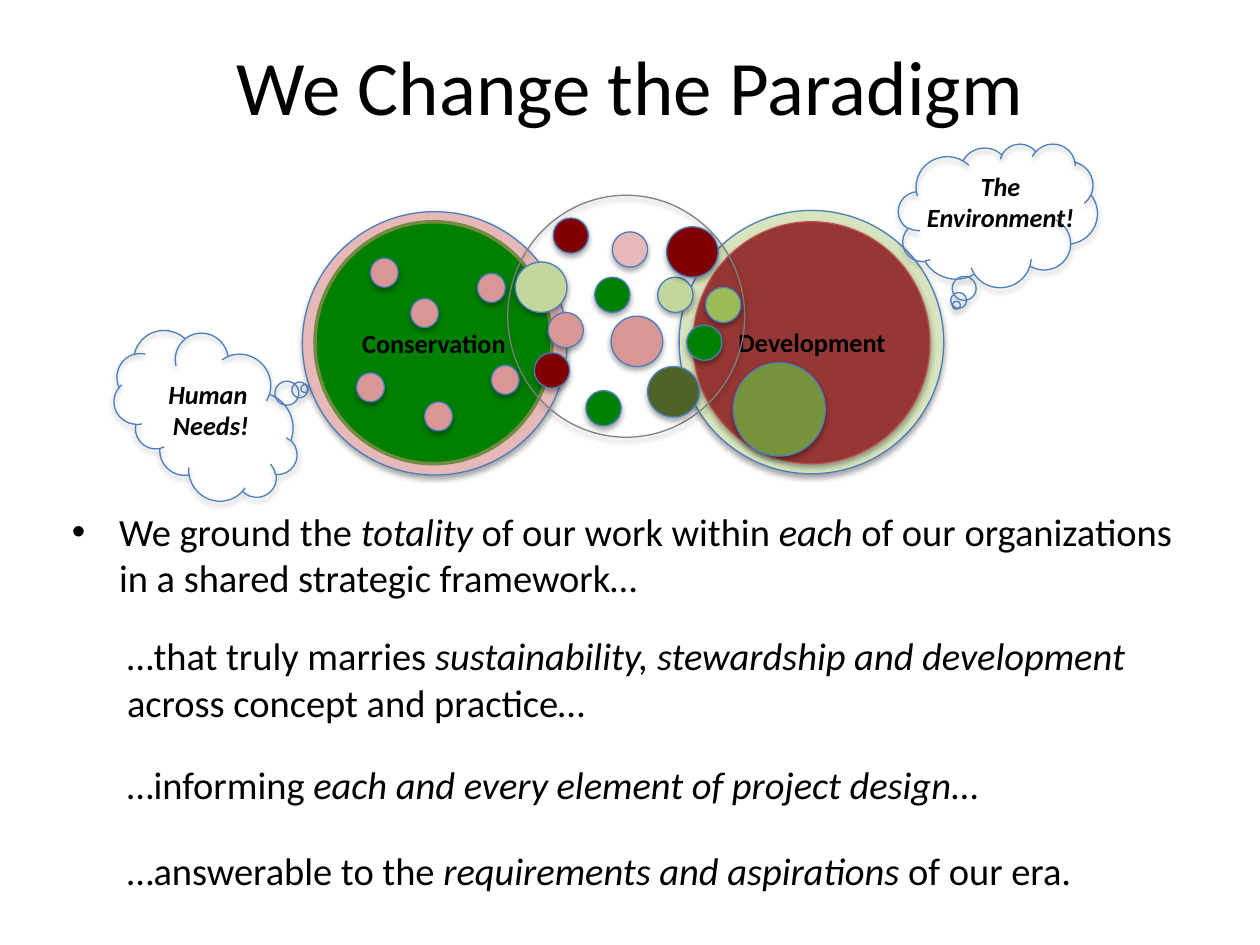
from dataclasses import dataclass

from lxml.etree import SubElement
from pptx import Presentation
from pptx.dml.color import RGBColor
from pptx.enum.shapes import MSO_SHAPE
from pptx.enum.text import MSO_ANCHOR, MSO_AUTO_SIZE, PP_ALIGN
from pptx.oxml.ns import qn
from pptx.util import Pt

EMU_PER_PX = 9144  # 100 px to the inch


def px(length):
    return length * EMU_PER_PX


@dataclass(frozen=True)
class Theme:
    font: str = "Calibri"
    title_size: int = 44
    body_size: int = 22
    label_size: int = 15
    text: str = "000000"
    outline: str = "4B7EBC"
    outline_width: float = 0.75
    grey: str = "808080"
    red: str = "953735"
    red_edge: str = "BF4C48"
    maroon: str = "800000"
    pink: str = "D99694"
    pale_pink: str = "E6B9B8"
    green: str = "008000"
    green_edge: str = "738A42"
    olive: str = "77933C"
    dark_olive: str = "4F6228"
    lime: str = "9BBB59"
    light_lime: str = "C3D69B"
    pale_lime: str = "D7E4BD"


class SlideBuilder:
    def __init__(self, slide, theme):
        self.slide = slide
        self.theme = theme
        self.shapes = slide.shapes

    def start_group(self):
        self.shapes = self.slide.shapes.add_group_shape().shapes

    def end_group(self):
        self.shapes = self.slide.shapes

    def place(self, shape, left, top, width, height):
        shape.left, shape.top = px(left), px(top)
        shape.width, shape.height = px(width), px(height)

    def add_runs(self, paragraph, runs, size, bold=False):
        """Each run is a (text, italic) pair."""
        for text, italic in runs:
            run = paragraph.add_run()
            run.text = text
            font = run.font
            font.name, font.size = self.theme.font, Pt(size)
            font.bold, font.italic = bold, italic
            font.color.rgb = RGBColor.from_string(self.theme.text)

    def title(self, text, *box):
        shape = self.slide.shapes.title
        self.place(shape, *box)
        frame = shape.text_frame
        frame.vertical_anchor = MSO_ANCHOR.MIDDLE
        paragraph = frame.paragraphs[0]
        paragraph.alignment = PP_ALIGN.CENTER
        self.add_runs(paragraph, [(text, False)], self.theme.title_size)

    def body(self, runs, *box):
        shape = self.slide.placeholders[1]
        self.place(shape, *box)
        shape.text_frame.auto_size = MSO_AUTO_SIZE.NONE
        paragraph = shape.text_frame.paragraphs[0]
        paragraph.space_before = Pt(0)
        self.add_runs(paragraph, runs, self.theme.body_size)

    def text_box(self, box, wrap=True):
        frame = self.shapes.add_textbox(*map(px, box)).text_frame
        frame.word_wrap = wrap
        return frame

    def continuation(self, runs, *box, indent=44):
        paragraph = self.text_box(box).paragraphs[0]
        properties = paragraph._p.get_or_add_pPr()
        properties.set("marL", str(px(indent)))
        properties.set("indent", "0")
        self.add_runs(paragraph, runs, self.theme.body_size)

    def label(self, lines, *box, italic=False, wrap=True):
        frame = self.text_box(box, wrap)
        for index, line in enumerate(lines):
            paragraph = frame.add_paragraph() if index else frame.paragraphs[0]
            paragraph.alignment = PP_ALIGN.CENTER
            self.add_runs(paragraph, [(line, italic)], self.theme.label_size, bold=True)

    def outlined(self, kind, box, fill, line=None, line_width=None, shadow=True):
        shape = self.shapes.add_shape(kind, *map(px, box))
        if fill:
            shape.fill.solid()
            shape.fill.fore_color.rgb = RGBColor.from_string(fill)
        else:
            shape.fill.background()
        shape.line.color.rgb = RGBColor.from_string(line or self.theme.outline)
        shape.line.width = Pt(line_width or self.theme.outline_width)
        shape.shadow.inherit = False
        if shadow:
            self.drop_shadow(shape)
        return shape

    def drop_shadow(self, shape):
        effects = shape._element.spPr.find(qn("a:effectLst"))
        outer = SubElement(effects, qn("a:outerShdw"), blurRad="40000",
                           dist="23000", dir="5400000", rotWithShape="0")
        color = SubElement(outer, qn("a:srgbClr"), val="000000")
        SubElement(color, qn("a:alpha"), val="35000")

    def circle(self, box, fill, **style):
        return self.outlined(MSO_SHAPE.OVAL, box, fill, **style)

    def dots(self, positions, width, height, fill):
        for left, top in positions:
            self.circle((left, top, width, height), fill)

    def cloud(self, *box, rotation=0):
        self.outlined(MSO_SHAPE.CLOUD_CALLOUT, box, None).rotation = rotation


def main():
    presentation = Presentation()
    presentation.slide_width, presentation.slide_height = px(1000), px(750)
    slide = presentation.slides.add_slide(presentation.slide_layouts[1])
    theme = Theme()
    builder = SlideBuilder(slide, theme)

    # Title and lead bullet
    builder.title("We Change the Paradigm", 50, 5, 900, 125)
    builder.body([("We ground the ", False), ("totality", True),
                  (" of our work within ", False), ("each", True),
                  (" of our organizations in a shared strategic framework…", False)],
                 47, 398, 900, 192)

    # Outer rings
    builder.circle((539, 167, 210, 209), theme.pale_lime)
    builder.circle((240, 168, 210, 209), theme.pale_pink)

    # Development
    builder.start_group()
    builder.circle((550, 176, 188, 192), theme.red, line=theme.red_edge)
    builder.label(["Development"], 576, 254, 137, 35, wrap=False)
    builder.circle((582, 288, 73, 74), theme.olive)

    # Conservation
    builder.start_group()
    builder.circle((250, 176, 188, 192), theme.green, line=theme.green_edge,
                   line_width=2, shadow=False)
    builder.label(["Conservation"], 276, 255, 137, 35, wrap=False)
    builder.dots([(283, 296), (337, 319), (390, 290), (379, 217), (326, 237), (294, 205)],
                 22, 23, theme.pink)

    # Thought clouds
    builder.start_group()
    builder.cloud(713, 114, 158, 114)
    builder.label(["The Environment!"], 717, 130, 154, 61, italic=True)
    builder.start_group()
    builder.label(["Human", " Needs!"], 88, 295, 154, 61, italic=True)
    builder.cloud(87, 271, 158, 114, rotation=230.7)

    # Shared circle with its mixed elements
    builder.start_group()
    builder.circle((403, 155, 188, 192), None, line=theme.grey)
    small_dots = {
        theme.maroon: [(439, 173), (424, 280)],
        theme.pale_pink: [(486, 184)],
        theme.light_lime: [(522, 220)],
        theme.green: [(545, 258), (472, 220), (465, 310)],
        theme.pink: [(435, 248)],
        theme.lime: [(560, 228)],
    }
    large_dots = {
        theme.maroon: [(529, 180)],
        theme.dark_olive: [(514, 291)],
        theme.pink: [(485, 251)],
        theme.light_lime: [(409, 208)],
    }
    for fill, positions in small_dots.items():
        builder.dots(positions, 28, 28, fill)
    for fill, positions in large_dots.items():
        builder.dots(positions, 41, 40, fill)
    builder.end_group()

    # Continuations of the lead bullet
    builder.continuation([("…that truly marries ", False),
                          ("sustainability, stewardship and development ", True),
                          ("across concept and practice…", False)], 47, 497, 900, 192)
    builder.continuation([("…informing ", False),
                          ("each and every element of project design", True),
                          ("…", False)], 47, 599, 900, 53)
    builder.continuation([("…answerable to the ", False),
                          ("requirements and aspirations ", True),
                          ("of our era.", False)], 47, 667, 900, 53)

    presentation.save("out.pptx")


if __name__ == "__main__":
    main()
